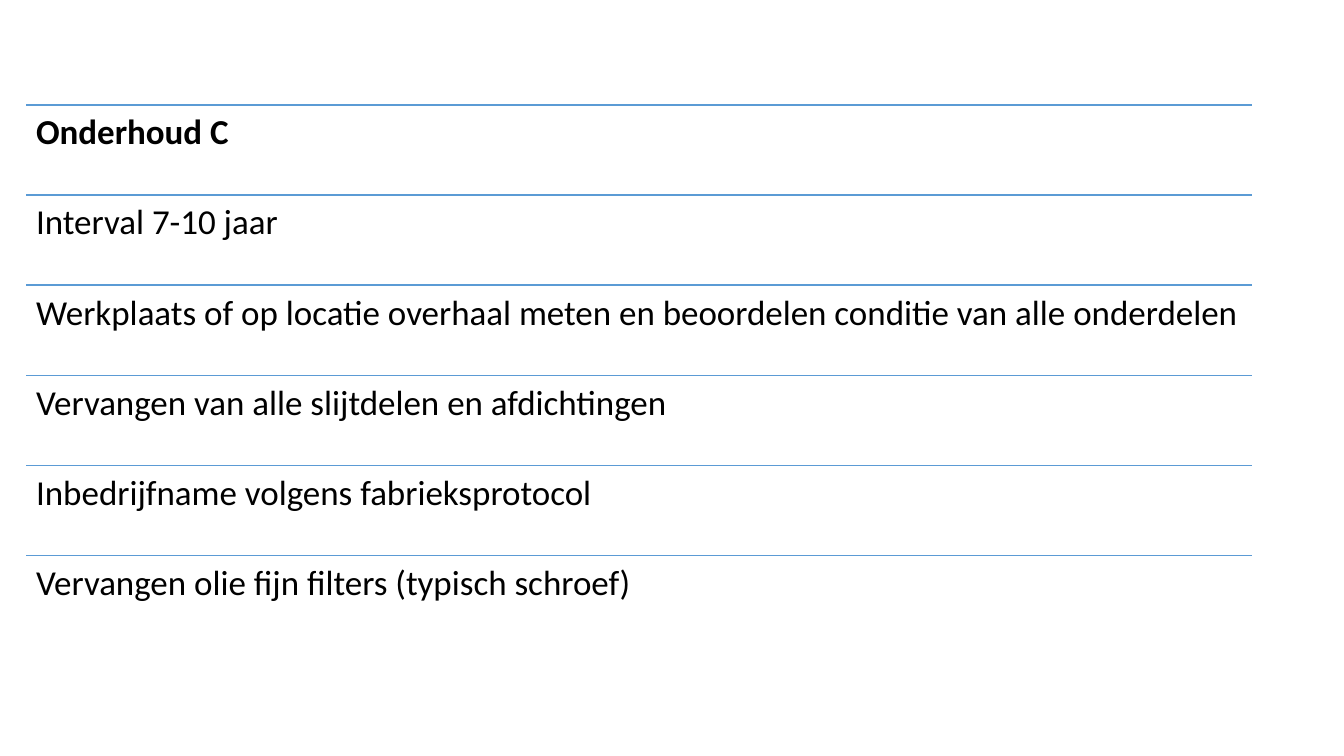
from dataclasses import dataclass

from lxml import etree
from pptx import Presentation
from pptx import util as u
from pptx.dml import color
from pptx.enum import shapes, text
from pptx.oxml import ns


@dataclass(frozen=True)
class Theme:
    rule: color.RGBColor = color.RGBColor(0x5B, 0x9B, 0xD5)
    ink: color.RGBColor = color.RGBColor(0, 0, 0)
    font: str = "Calibri"
    size: float = 25


theme = Theme()

LEFT, TOP, WIDTH, ROW_HEIGHT = 18.9, 74.9, 875.5, 64.4
INSET = u.Pt(6.9)

maintenance_steps = [
    "Onderhoud C",
    "Interval 7-10 jaar",
    "Werkplaats of op locatie overhaal meten en beoordelen conditie van alle onderdelen",
    "Vervangen van alle slijtdelen en afdichtingen",
    "Inbedrijfname volgens fabrieksprotocol",
    "Vervangen olie fijn filters (typisch schroef)",
]

frame_format = {
    "word_wrap": True,
    "auto_size": text.MSO_AUTO_SIZE.NONE,
    "vertical_anchor": text.MSO_ANCHOR.TOP,
    "margin_left": INSET,
    "margin_top": INSET,
    "margin_right": INSET,
    "margin_bottom": INSET,
}
para_format = {
    "alignment": text.PP_ALIGN.LEFT,
    "line_spacing": 0.9,
    "space_after": u.Pt(0.35 * theme.size),
}

deck = Presentation()
deck.slide_width = u.Pt(960)
deck.slide_height = u.Pt(540)
page = deck.slides.add_slide(deck.slide_layouts[6])
step_list = page.shapes.add_group_shape()

for index, step in enumerate(maintenance_steps):
    top = TOP + index * ROW_HEIGHT

    rule = step_list.shapes.add_connector(
        shapes.MSO_CONNECTOR.STRAIGHT,
        u.Pt(LEFT), u.Pt(top), u.Pt(LEFT + WIDTH), u.Pt(top),
    )
    rule.line.color.rgb = theme.rule
    rule.line.width = u.Pt(1)
    etree.SubElement(rule.element.spPr, ns.qn("a:effectLst"))

    box = step_list.shapes.add_textbox(
        u.Pt(LEFT), u.Pt(top), u.Pt(WIDTH), u.Pt(ROW_HEIGHT)
    )
    for name, value in frame_format.items():
        setattr(box.text_frame, name, value)

    para = box.text_frame.paragraphs[0]
    for name, value in para_format.items():
        setattr(para, name, value)

    span = para.add_run()
    span.text = step
    span_format = {
        "name": theme.font,
        "size": u.Pt(theme.size),
        "bold": index == 0,
    }
    for name, value in span_format.items():
        setattr(span.font, name, value)
    span.font.color.rgb = theme.ink

deck.save("out.pptx")
